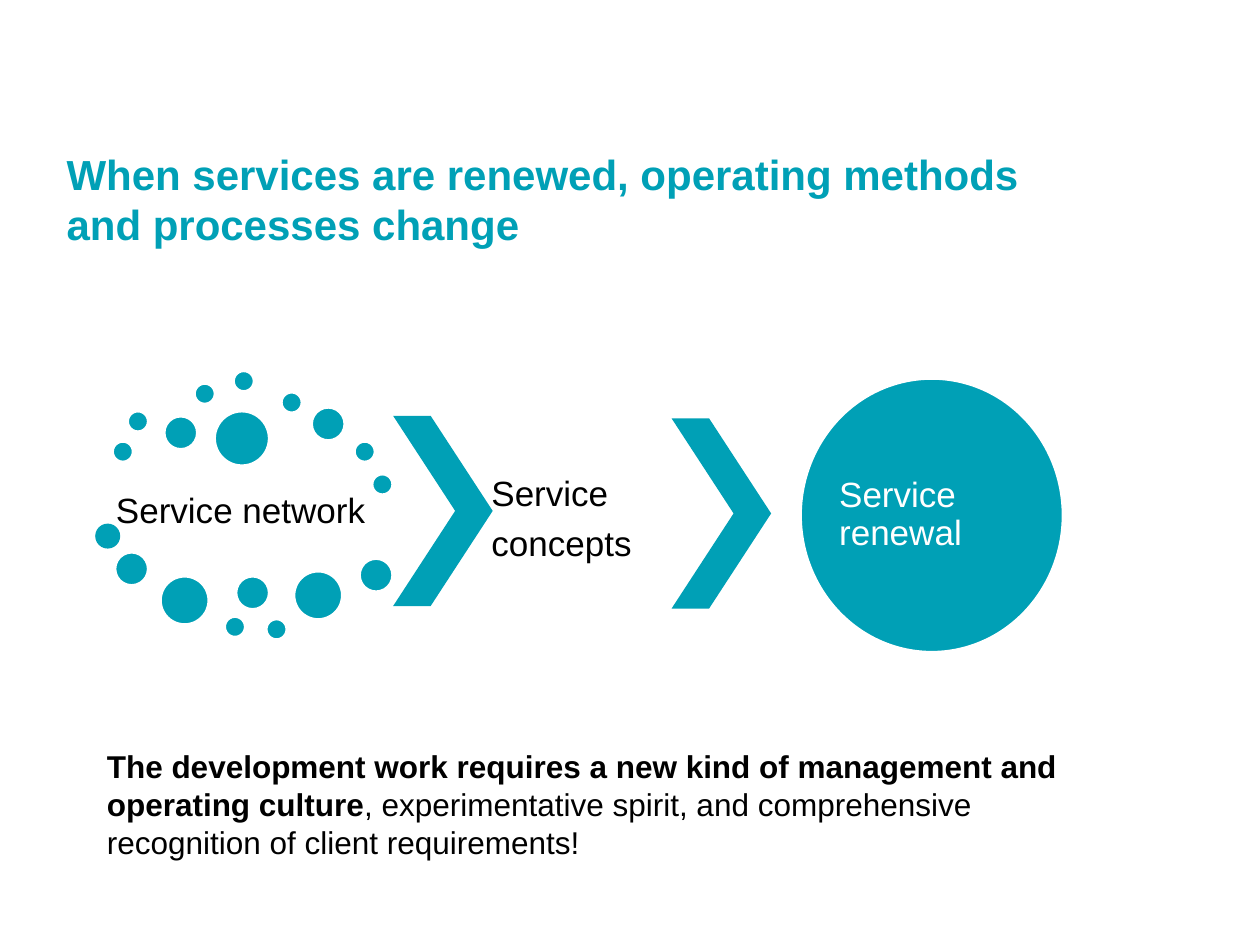
import pptx
import pptx.dml.color
import pptx.enum.shapes
import pptx.enum.text
import pptx.util

Inches = pptx.util.Inches
Pt = pptx.util.Pt
Shape = pptx.enum.shapes.MSO_SHAPE
Anchor = pptx.enum.text.MSO_ANCHOR

TEAL, WHITE, BLACK = "00A0B6", "FFFFFF", "000000"


def color(hex_string):
    return pptx.dml.color.RGBColor.from_string(hex_string)


class SlideBuilder:
    font_name = "Arial"

    def __init__(self, slide):
        self.slide = slide

    def shape(self, kind, left, top, width, height, line=None):
        shape = self.slide.shapes.add_shape(
            kind, Inches(left), Inches(top), Inches(width), Inches(height))
        shape.shadow.inherit = False
        shape.fill.solid()
        shape.fill.fore_color.rgb = color(TEAL)
        if line:
            shape.line.color.rgb = color(line)
            shape.line.width = Pt(2)
        else:
            shape.line.fill.background()
        return shape

    def dot(self, left, top, size, line=WHITE):
        self.shape(Shape.OVAL, left, top, size, size, line)

    def chevron(self, left, top):
        chevron = self.shape(Shape.CHEVRON, left, top, 0.79, 1.51)
        chevron.adjustments[0] = 0.623

    def text(self, left, top, width, height, paragraphs, size, text_color=BLACK,
             anchor=Anchor.MIDDLE, inset=None):
        """Add a text box; each paragraph is a list of (text, bold) runs."""
        box = self.slide.shapes.add_textbox(
            Inches(left), Inches(top), Inches(width), Inches(height))
        frame = box.text_frame
        frame.word_wrap = True
        frame.vertical_anchor = anchor
        if inset is not None:
            frame.margin_left = frame.margin_right = Inches(inset)
            frame.margin_top = frame.margin_bottom = Inches(inset)
        for index, runs in enumerate(paragraphs):
            paragraph = frame.add_paragraph() if index else frame.paragraphs[0]
            paragraph.font.name = self.font_name
            paragraph.font.size = Pt(size)
            paragraph.font.color.rgb = color(text_color)
            for text, bold in runs:
                run = paragraph.add_run()
                run.text = text
                run.font.bold = bold
        return frame

    def label(self, left, top, width, height, lines, text_color=BLACK, inset=0.03):
        frame = self.text(left, top, width, height,
                          [[(line, False)] for line in lines], 20, text_color,
                          inset=inset)
        for paragraph in frame.paragraphs:
            paragraph.line_spacing = 0.9
            paragraph.space_after = Pt(7)


def main():
    presentation = pptx.Presentation()
    presentation.slide_width = Inches(10)
    presentation.slide_height = Inches(7.5)
    builder = SlideBuilder(
        presentation.slides.add_slide(presentation.slide_layouts[6]))

    # Title
    builder.text(0.43, 1.07, 8.03, 1.01,
                 [[("When services are renewed, operating methods and processes change",
                    True)]], 24, TEAL)

    # Service network: label ringed by dots, grouped by diameter
    builder.label(0.89, 3.71, 2.15, 0.71, ["Service network"])
    network_dots = {
        0.17: [(0.89, 3.5), (1.01, 3.26), (1.54, 3.04), (1.85, 2.94), (2.23, 3.11),
               (2.81, 3.5), (2.95, 3.76), (1.78, 4.89), (2.11, 4.91)],
        0.27: [(1.3, 3.3), (2.47, 3.23), (0.91, 4.38), (1.87, 4.57), (2.85, 4.43)],
        0.39: [(1.27, 4.57), (2.33, 4.53)],
        0.44: [(1.7, 3.26)],
    }
    for size, positions in network_dots.items():
        for left, top in positions:
            builder.dot(left, top, size)
    builder.dot(0.77, 4.17, 0.17, line=TEAL)

    # Service concepts between two chevrons
    builder.chevron(3.12, 3.3)
    builder.label(3.87, 3.6, 1.65, 1.06, ["Service", "concepts"])
    builder.chevron(5.33, 3.32)

    # Service renewal
    builder.shape(Shape.OVAL, 6.35, 3, 2.09, 2.18, WHITE)
    builder.label(6.66, 3.32, 1.48, 1.54, ["Service renewal"], WHITE, inset=0)

    # Conclusion
    builder.text(0.75, 5.88, 7.8, 1.01, [[
        ("The development work requires a new kind of management and operating culture",
         True),
        (", experimentative spirit, and comprehensive recognition of client requirements!",
         False),
    ]], 18, anchor=Anchor.TOP)

    presentation.save("out.pptx")


if __name__ == "__main__":
    main()
